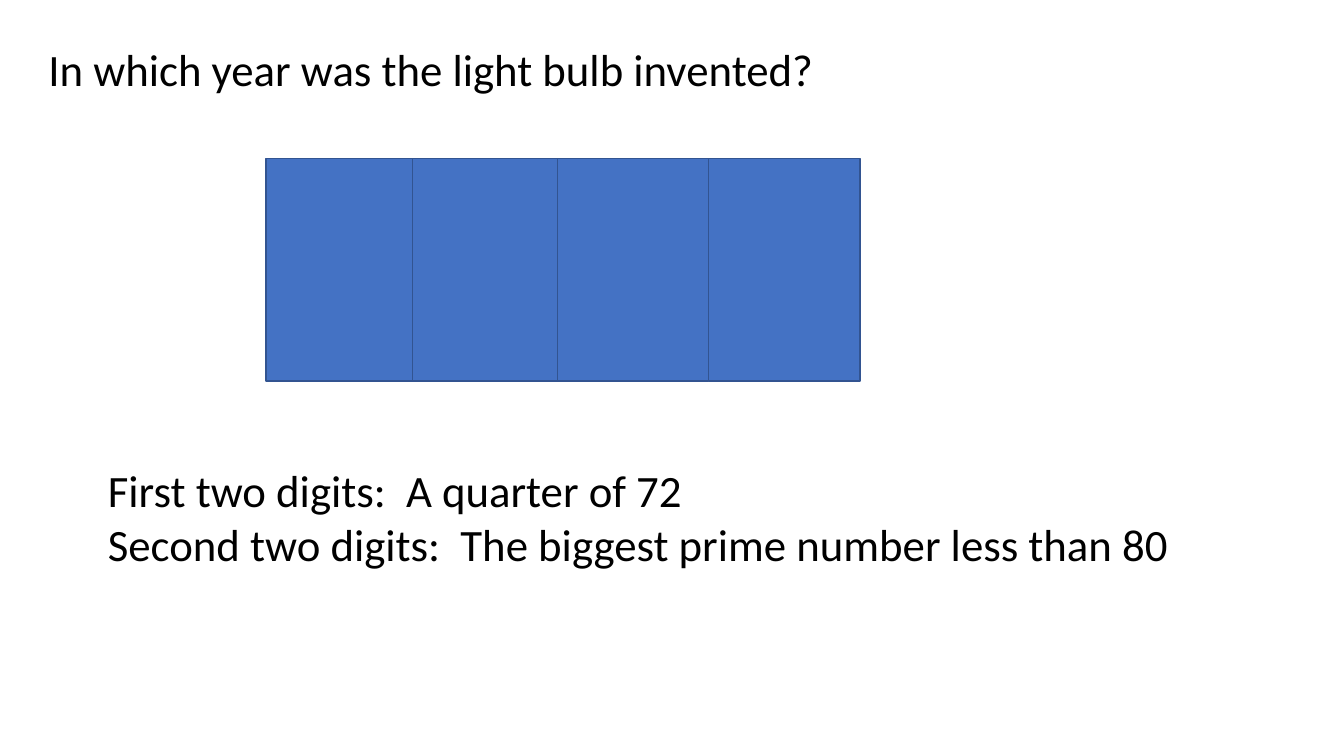
from pptx import Presentation
from pptx.dml.color import RGBColor
from pptx.enum.shapes import MSO_SHAPE
from pptx.enum.text import MSO_ANCHOR, MSO_AUTO_SIZE, PP_ALIGN
from pptx.util import Inches, Pt

RECT = MSO_SHAPE.RECTANGLE
TOP = MSO_ANCHOR.TOP
NO_FIT = MSO_AUTO_SIZE.NONE
LEFT = PP_ALIGN.LEFT


def rgb(value):
    return RGBColor.from_string(value)


def write(sp, lines, at, size=32, font="Calibri", color="000000"):
    """Place a placeholder and fill it with plain, unbulleted paragraphs."""
    sp.left, sp.top, sp.width, sp.height = [Inches(v) for v in at]
    tf = sp.text_frame
    tf.word_wrap = True
    tf.auto_size = NO_FIT
    tf.vertical_anchor = TOP
    tf.text = "\n".join(lines)
    for p in tf.paragraphs:
        p.alignment = LEFT
        p.space_before = Pt(0)
        pPr = p._p.get_or_add_pPr()
        pPr.set("marL", "0")
        pPr.set("indent", "0")
        pPr.append(pPr.makeelement(
            "{http://schemas.openxmlformats.org/drawingml/2006/main}buNone", {}))
        r = p.runs[0]
        r.font.size = Pt(size)
        r.font.name = font
        r.font.color.rgb = rgb(color)


prs = Presentation()
prs.slide_width, prs.slide_height = Inches(13.33), Inches(7.5)
s = prs.slides.add_slide(prs.slide_layouts[1])

# Question
write(s.shapes.title, ["In which year was the light bulb invented?"],
      (0.38, 0.36, 11.9, 0.64))

# One cover for each digit of the year
for x in (2.64, 4.09, 5.53, 7.03):
    sp = s.shapes.add_shape(RECT, Inches(x), Inches(1.57), Inches(1.5), Inches(2.21))
    sp.shadow.inherit = False
    sp.fill.solid()
    sp.fill.fore_color.rgb = rgb("4472C4")
    sp.line.color.rgb = rgb("325491")
    sp.line.width = Pt(1)

# Clues
write(s.placeholders[1],
      ["First two digits:  A quarter of 72",
       "Second two digits:  The biggest prime number less than 80"],
      (0.97, 4.54, 11.46, 1.18))

prs.save("out.pptx")
